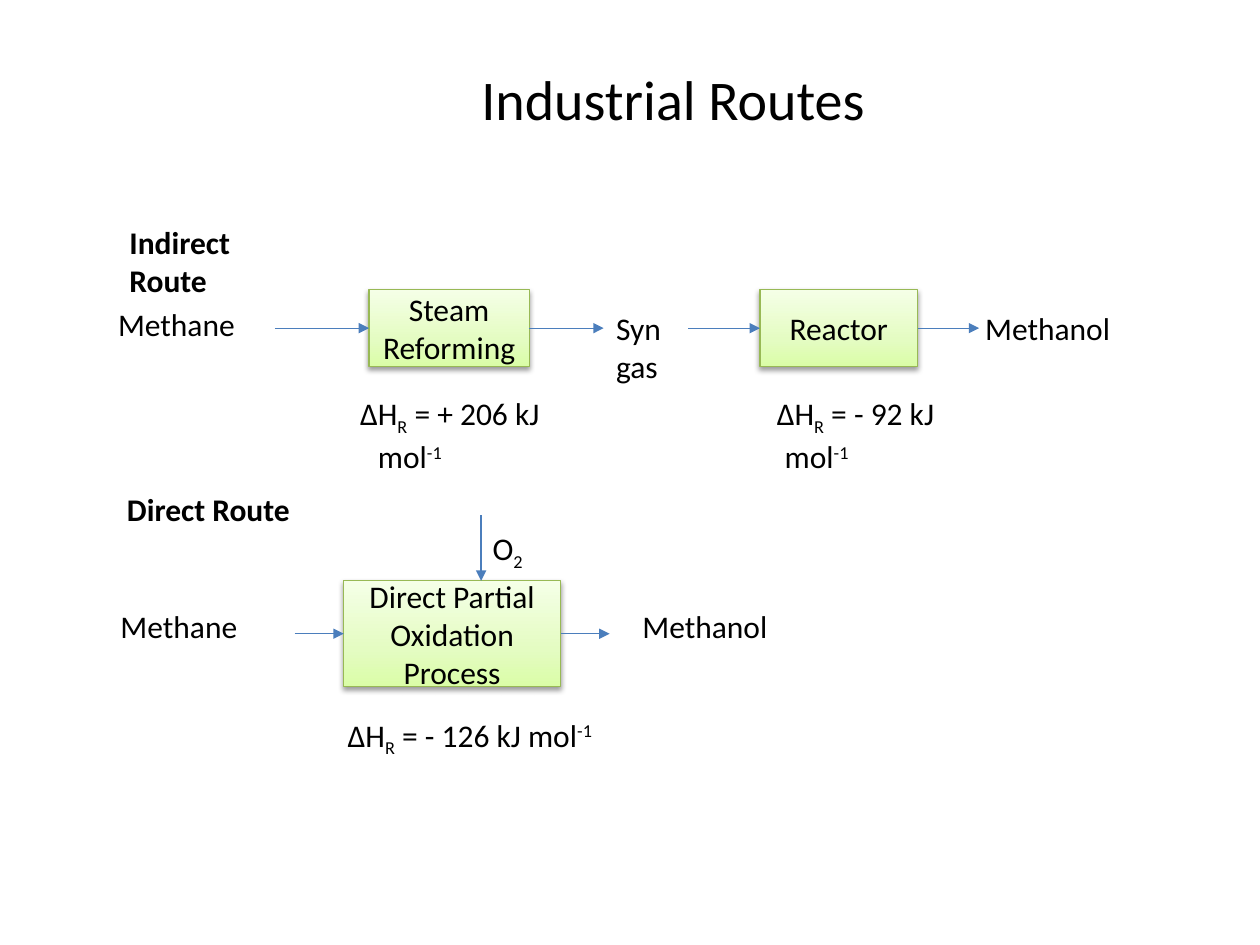
from copy import deepcopy

from lxml.etree import SubElement
from pptx import Presentation
from pptx.dml.color import RGBColor
from pptx.enum.shapes import MSO_CONNECTOR, MSO_SHAPE
from pptx.enum.text import MSO_ANCHOR, PP_ALIGN
from pptx.oxml.ns import qn
from pptx.util import Cm, Pt

BLACK = RGBColor(0x00, 0x00, 0x00)
BLUE = RGBColor(0x4B, 0x7E, 0xBC)
GREEN = RGBColor(0x98, 0xB9, 0x55)
GRADIENT = (
    (0, RGBColor(0xDA, 0xFD, 0xA7)),
    (0.35, RGBColor(0xE4, 0xFC, 0xC2)),
    (1, RGBColor(0xF5, 0xFF, 0xE7)),
)
FONT = "Calibri"
SUB, SUPER = -25, 30
TOP, LEFT, RIGHT = 0, 1, 3
LINE_H, TWO_LINES_H = 1.02, 1.8
MIDDLE = 0


def style(p, size=18, bold=False, align=PP_ALIGN.LEFT):
    p.alignment = align
    p.font.name = FONT
    p.font.size = Pt(size)
    p.font.bold = bold
    p.font.color.rgb = BLACK


def add_label(s, x, y, w, h, *runs, bold=False):
    tf = s.shapes.add_textbox(Cm(x), Cm(y), Cm(w), Cm(h)).text_frame
    tf.word_wrap = True
    p = tf.paragraphs[0]
    style(p, bold=bold)
    for text, baseline in runs:
        r = p.add_run()
        r.text = text
        if baseline:
            r._r.get_or_add_rPr().set("baseline", str(baseline * 1000))
    return p


def add_enthalpy(s, x, y, w, h, value, first_line, wrapped_line=0.56):
    p = add_label(s, x, y, w, h, ("∆H", 0), ("R", SUB),
                  (f" = {value} kJ mol", 0), ("-1", SUPER))
    pPr = p._p.get_or_add_pPr()
    pPr.set("marL", str(Cm(wrapped_line)))
    pPr.set("indent", str(Cm(first_line - wrapped_line)))


def add_process(s, x, y, w, h, text):
    sp = s.shapes.add_shape(MSO_SHAPE.RECTANGLE, Cm(x), Cm(y), Cm(w), Cm(h))
    sp.fill.gradient()
    sp.fill.gradient_angle = 90
    stops = sp._element.spPr.find(".//" + qn("a:gsLst"))
    stops.append(deepcopy(stops[0]))
    for stop, (position, color) in zip(sp.fill.gradient_stops, GRADIENT):
        stop.position = position
        stop.color.rgb = color
    sp.line.color.rgb = GREEN
    sp.line.width = Pt(0.75)

    sp.shadow.inherit = False
    effects = sp._element.spPr.find(qn("a:effectLst"))
    shadow = SubElement(effects, qn("a:outerShdw"), blurRad=str(Pt(3.1)),
                        dist=str(Pt(1.6)), dir="5400000", rotWithShape="0")
    color = SubElement(shadow, qn("a:srgbClr"), val="000000")
    SubElement(color, qn("a:alpha"), val="38000")

    tf = sp.text_frame
    tf.word_wrap = True
    tf.vertical_anchor = MSO_ANCHOR.MIDDLE
    p = tf.paragraphs[0]
    p.text = text
    style(p, align=PP_ALIGN.CENTER)
    return sp


def add_arrow(s, x1, y1, x2, y2):
    line = s.shapes.add_connector(MSO_CONNECTOR.STRAIGHT,
                                  Cm(x1), Cm(y1), Cm(x2), Cm(y2))
    line.line.color.rgb = BLUE
    line.line.width = Pt(0.75)
    SubElement(line.line._get_or_add_ln(), qn("a:tailEnd"), type="triangle")
    SubElement(line._element.spPr, qn("a:effectLst"))
    return line


def add_flow(s, sp, x_in, x_out, y):
    add_arrow(s, x_in, y, sp.left.cm, y).end_connect(sp, LEFT)
    add_arrow(s, (sp.left + sp.width) / Cm(1), y, x_out, y).begin_connect(sp, RIGHT)


def build_title(s, x, y, w, h):
    title = s.shapes.title
    title.left, title.top, title.width, title.height = Cm(x), Cm(y), Cm(w), Cm(h)
    title.text_frame.text = "Industrial Routes"
    style(title.text_frame.paragraphs[0], size=32)


def build_indirect_route(s, x, y):
    box_y, box_h = y + 1.47, 1.55
    mid = box_y + box_h / 2
    add_label(s, x + 0.36, y, 3.94, TWO_LINES_H, ("Indirect Route", 0), bold=True)
    add_label(s, x + 0.13, y + 1.65, 3.4, LINE_H, ("Methane", 0))
    add_label(s, x + 10.17, y + 1.73, 1.9, TWO_LINES_H, ("Syn gas", 0))
    add_label(s, x + 17.61, y + 1.73, 4, LINE_H, ("Methanol", 0))
    steps = (
        ("Steam Reforming", 5.44, 3.23, 3.54, 10.17, "+ 206", 4.81, 0.2),
        ("Reactor", 13.32, 3.18, 11.87, 17.74, "- 92", 13.01, 0.4),
    )
    for text, left, w, x_in, x_out, value, value_x, first_line in steps:
        sp = add_process(s, x + left, box_y, w, box_h, text)
        add_flow(s, sp, x + x_in, x + x_out, mid)
        add_enthalpy(s, x + value_x, y + 3.45, 4.5, TWO_LINES_H, value, first_line)


def build_direct_route(s, x, y):
    box_y, box_h = y + 1.96, 2.13
    add_label(s, x + 0.31, y, 3.94, LINE_H, ("Direct Route", 0), bold=True)
    add_label(s, x + 0.18, y + 2.37, 3.63, LINE_H, ("Methane", 0))
    add_label(s, x + 10.7, y + 2.37, 3.48, LINE_H, ("Methanol", 0))
    add_label(s, x + 7.68, y + 0.79, 2.18, LINE_H, ("O", 0), ("2", SUB))
    sp = add_process(s, x + 4.93, box_y, 4.37, box_h, "Direct Partial Oxidation Process")
    add_flow(s, sp, x + 3.94, x + 10.29, box_y + box_h / 2)
    add_arrow(s, x + 7.7, y + 0.64, x + 7.7, box_y)
    add_enthalpy(s, x + 4.76, y + 4.55, 5.94, LINE_H, "- 126", 0)


def main():
    prs = Presentation()
    prs.slide_width, prs.slide_height = Cm(25.4), Cm(19.05)
    s = prs.slides.add_slide(prs.slide_layouts[5])
    build_title(s, 9.45, 1.17, 8.81, 1.63)
    build_indirect_route(s, 2, 4.37)
    build_direct_route(s, 2, 9.75)
    prs.save("out.pptx")


if __name__ == "__main__":
    main()
